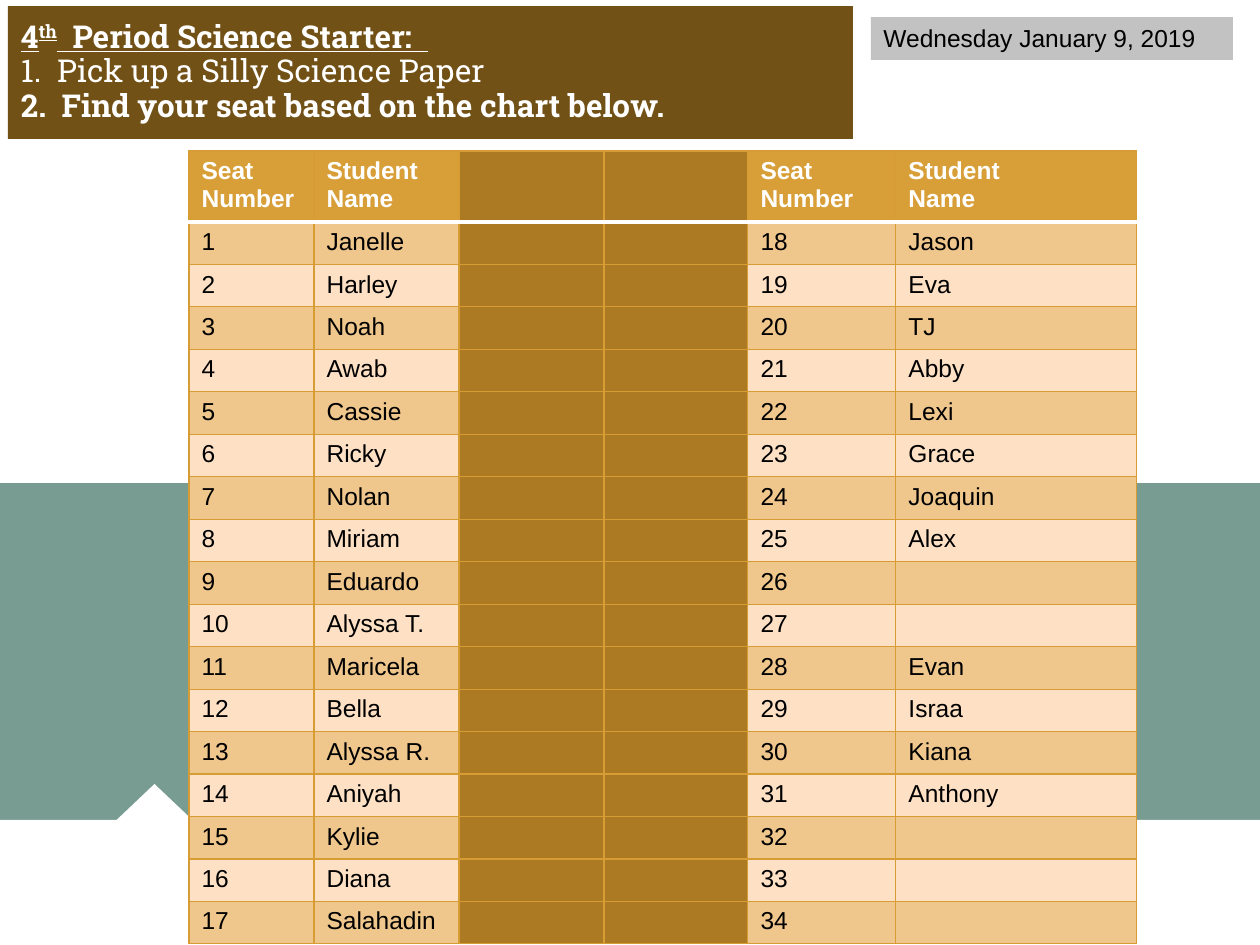
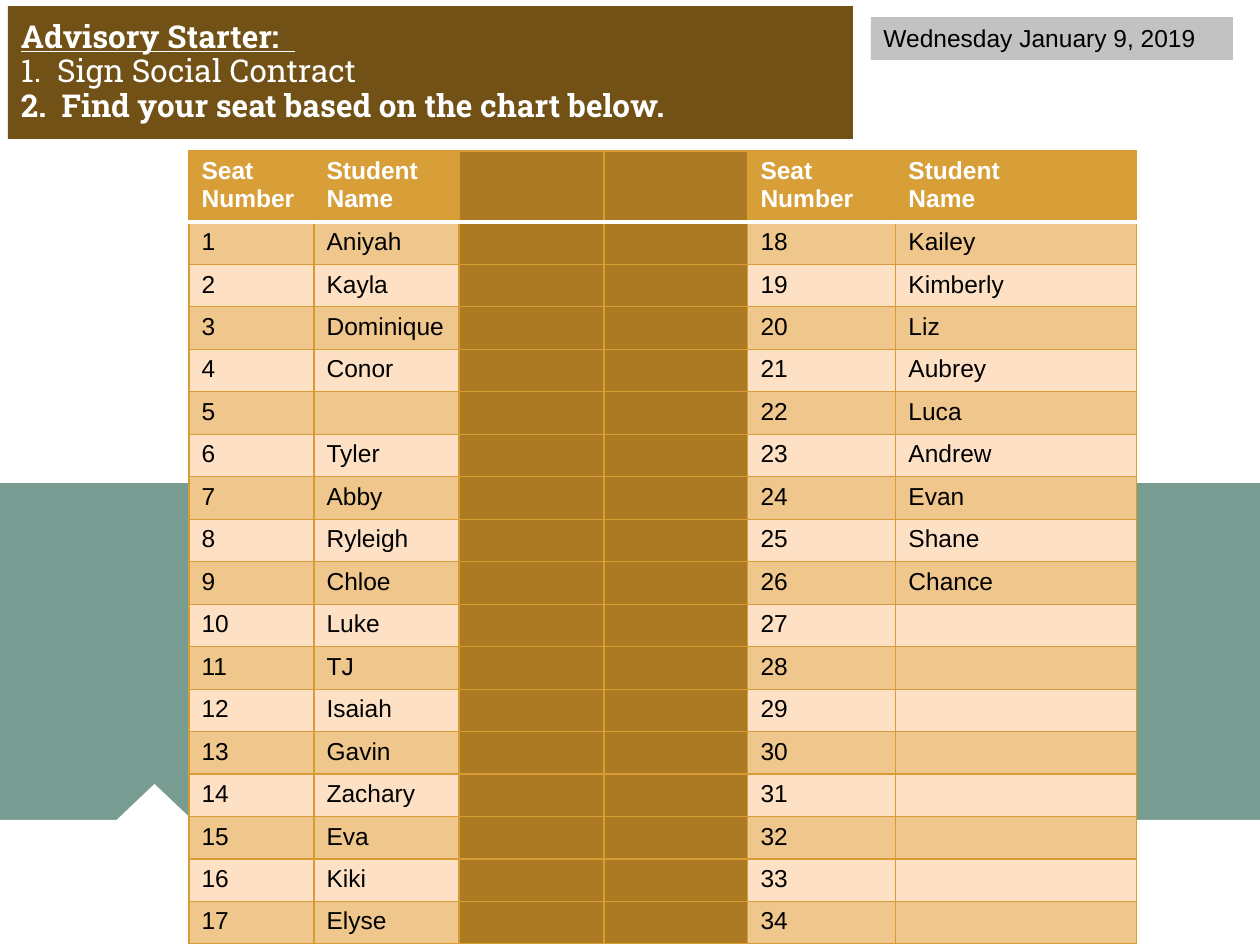
from lxml.etree import SubElement
from pptx import Presentation
from pptx.dml.color import RGBColor
from pptx.enum.shapes import MSO_SHAPE
from pptx.enum.text import MSO_ANCHOR, PP_ALIGN
from pptx.oxml.ns import qn
from pptx.util import Emu, Pt

SCALE = 914400 / 126
COLORS = {
    "white": "FFFFFF", "black": "000000", "sage": "789C91",
    "title": "725116", "date": "C2C2C2", "header": "D89F39",
    "aisle": "AB7A22", "dark_row": "EFC68C", "pale_row": "FEE1C5",
    "grid": "D79D34",
}
HEADINGS = ["Seat Number", "Student\nName", "", "", "Seat\nNumber", "Student\nName"]
COLUMN_WIDTHS = [125, 145, 145, 144, 148, 241]
HEADER_HEIGHT, ROW_HEIGHT, ROW_COUNT = 71, 42, 17
AISLE_COLUMNS = (2, 3)
BACKDROP = [
    (MSO_SHAPE.RECTANGLE, (0, 483, 1260, 346), "sage"),
    (MSO_SHAPE.RECTANGLE, (0, 820, 1260, 125), "white"),
    (MSO_SHAPE.ISOSCELES_TRIANGLE, (106, 784, 97, 46), "white"),
]
UNDERLINED, PLAIN, BOLD = (True, True), (False, False), (True, False)
FIND_SEAT = [("2.  Find your seat based on the chart below.", BOLD)]

# Title lines hold (text, (bold, underline)) spans; names run in seat order.
CLASSES = [
    {
        "title": [
            [("4", UNDERLINED), ("th", UNDERLINED), ("  Period Science Starter:  ", UNDERLINED)],
            [("1.  Pick up a Silly Science Paper", PLAIN)],
            FIND_SEAT,
        ],
        "left": ["Janelle", "Harley", "Noah", "Awab", "Cassie", "Ricky", "Nolan",
                 "Miriam", "Eduardo", "Alyssa T.", "Maricela", "Bella", "Alyssa R.",
                 "Aniyah", "Kylie", "Diana", "Salahadin"],
        "right": ["Jason", "Eva", "TJ", "Abby", "Lexi", "Grace", "Joaquin", "Alex",
                  "", "", "Evan", "Israa", "Kiana", "Anthony", "", "", ""],
    },
    {
        "title": [
            [("Advisory Starter:  ", UNDERLINED)],
            [("1.  Sign Social Contract", PLAIN)],
            FIND_SEAT,
        ],
        "left": ["Aniyah", "Kayla", "Dominique", "Conor", "", "Tyler", "Abby",
                 "Ryleigh", "Chloe", "Luke", "TJ", "Isaiah", "Gavin", "Zachary",
                 "Eva", "Kiki", "Elyse"],
        "right": ["Kailey", "Kimberly", "Liz", "Aubrey", "Luca", "Andrew", "Evan",
                  "Shane", "Chance"] + [""] * 8,
    },
]


def px(length):
    return Emu(round(length * SCALE))


def add_span(para, text, size, font, color, bold=False, underline=False):
    span = para.add_run()
    span.text = text
    span.font.size = Pt(size)
    span.font.name = font
    span.font.color.rgb = RGBColor.from_string(COLORS[color])
    span.font.bold = bold
    span.font.underline = underline
    return span


deck = Presentation()
deck.slide_width, deck.slide_height = px(1260), px(945)

for group in CLASSES:
    page = deck.slides.add_slide(deck.slide_layouts[6])

    panels = BACKDROP + [
        (MSO_SHAPE.RECTANGLE, (8, 6, 845, 133), "title"),
        (MSO_SHAPE.RECTANGLE, (871, 17, 362, 43), "date"),
    ]
    boxes = []
    for kind, bounds, color in panels:
        box = page.shapes.add_shape(kind, *map(px, bounds))
        box.shadow.inherit = False
        box.fill.solid()
        box.fill.fore_color.rgb = RGBColor.from_string(COLORS[color])
        box.line.fill.background()
        boxes.append(box)
    title_box, date_box = boxes[-2:]

    frame = title_box.text_frame
    frame.word_wrap = True
    frame.vertical_anchor = MSO_ANCHOR.MIDDLE
    frame.margin_left = frame.margin_right = px(13)
    frame.margin_top = frame.margin_bottom = px(13)
    para = frame.paragraphs[0]
    para.alignment = PP_ALIGN.LEFT
    para.line_spacing = 0.92
    for number, line in enumerate(group["title"]):
        if number:
            para.add_line_break()
        for text, (bold, underline) in line:
            span = add_span(para, text, 18, "Roboto Slab", "white", bold, underline)
            if text == "th":
                span.font._element.set("baseline", "30000")

    frame = date_box.text_frame
    frame.word_wrap = True
    frame.vertical_anchor = MSO_ANCHOR.TOP
    para = frame.paragraphs[0]
    para.alignment = PP_ALIGN.LEFT
    add_span(para, "Wednesday January 9, 2019", 14, "Arial", "black")

    rows = [HEADINGS]
    for seat, (left, right) in enumerate(zip(group["left"], group["right"]), 1):
        rows.append([str(seat), left, "", "", str(seat + ROW_COUNT), right])
    height = HEADER_HEIGHT + ROW_COUNT * ROW_HEIGHT
    table = page.shapes.add_table(
        len(rows), len(HEADINGS), px(189), px(151), px(sum(COLUMN_WIDTHS)), px(height)
    ).table
    for column, width in zip(table.columns, COLUMN_WIDTHS):
        column.width = px(width)

    for r, texts in enumerate(rows):
        table.rows[r].height = px(ROW_HEIGHT if r else HEADER_HEIGHT)
        for c, text in enumerate(texts):
            cell = table.cell(r, c)
            properties = cell._tc.get_or_add_tcPr()
            for side in ("lnL", "lnR", "lnT", "lnB"):
                under_header = (r, side) in ((0, "lnB"), (1, "lnT"))
                border = SubElement(properties, qn("a:" + side),
                                    w=str(Pt(2) if under_header else Pt(0.75)))
                paint = SubElement(border, qn("a:solidFill"))
                SubElement(paint, qn("a:srgbClr"),
                           val=COLORS["white" if under_header else "grid"])

            if c in AISLE_COLUMNS:
                color = "aisle"
            elif r == 0:
                color = "header"
            else:
                color = "dark_row" if r % 2 else "pale_row"
            cell.fill.solid()
            cell.fill.fore_color.rgb = RGBColor.from_string(COLORS[color])

            for number, line in enumerate(text.split("\n")):
                frame = cell.text_frame
                para = frame.add_paragraph() if number else frame.paragraphs[0]
                if line:
                    add_span(para, line, 14, "Arial", "black" if r else "white", bold=r == 0)
                else:
                    # Keeps an empty cell from stretching its row.
                    SubElement(para._p, qn("a:endParaRPr"), sz="1400")

deck.save("out.pptx")
